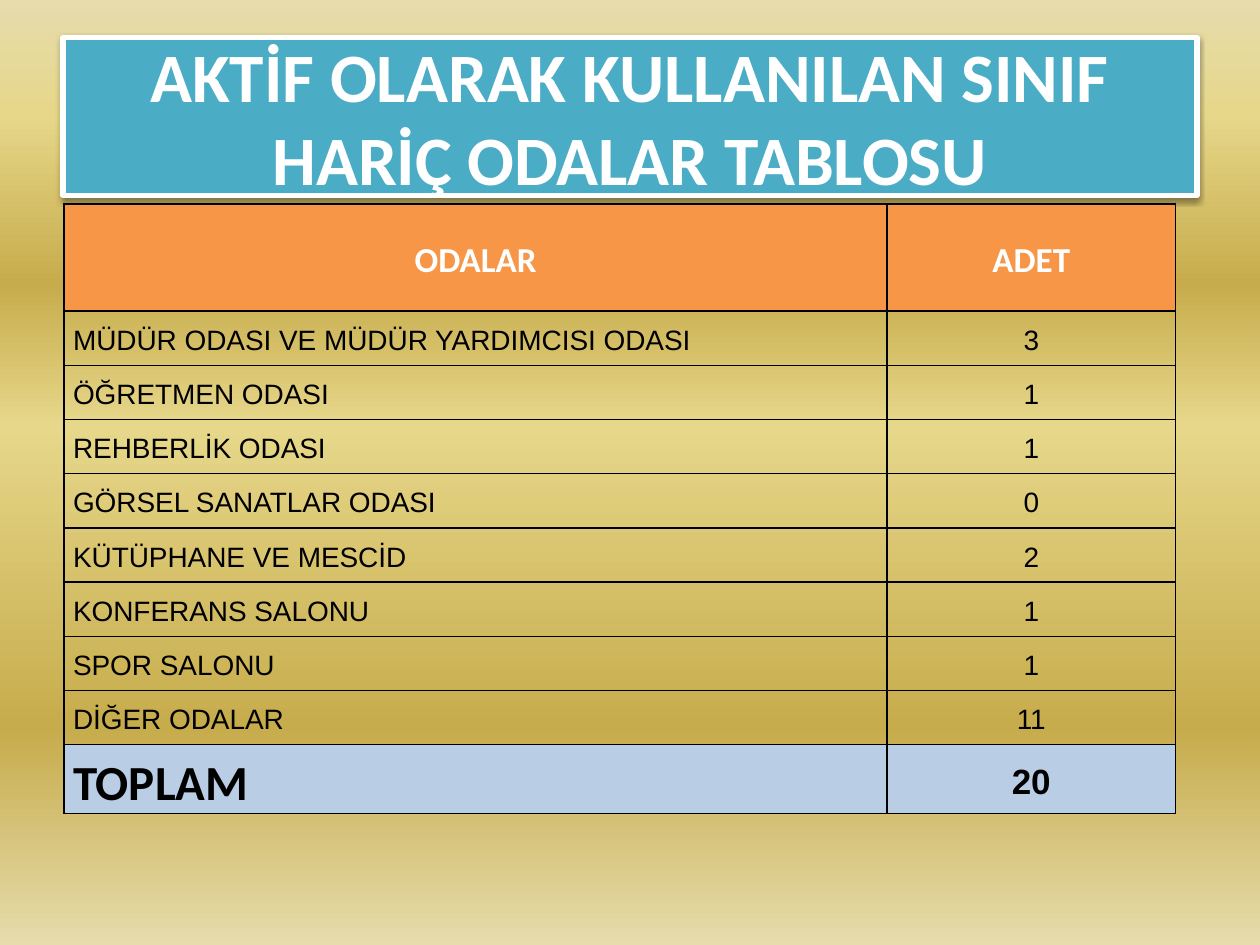
from lxml import etree
from pptx import Presentation
from pptx import util as u
from pptx.dml.color import RGBColor
from pptx.enum import text
from pptx.oxml import ns

TITLE = "AKTİF OLARAK KULLANILAN SINIF HARİÇ ODALAR TABLOSU"
HEADER = ("ODALAR", "ADET")
ROOMS = [
    ("MÜDÜR ODASI VE MÜDÜR YARDIMCISI ODASI", "3"),
    ("ÖĞRETMEN ODASI", "1"),
    ("REHBERLİK ODASI", "1"),
    ("GÖRSEL SANATLAR ODASI", "0"),
    ("KÜTÜPHANE VE MESCİD", "2"),
    ("KONFERANS SALONU", "1"),
    ("SPOR SALONU", "1"),
    ("DİĞER ODALAR", "11"),
]
TOTAL = ("TOPLAM", "20")
STOPS = [(0, "E6DCAC"), (12, "E6D78A"), (30, "C7AC4C"),
         (45, "E6D78A"), (77, "C7AC4C"), (100, "E6DCAC")]


def color(value):
    """Return the colour for a hex string."""
    return RGBColor.from_string(value)


def add_node(parent, tag, **attributes):
    """Append an XML element with the given attributes."""
    node = etree.SubElement(parent, ns.qn(tag))
    for name, value in attributes.items():
        node.set(name, str(value))
    return node


def paint_background(page):
    """Fill the page with a banded vertical gradient."""
    fill = page.background.fill
    fill.gradient()
    fill.gradient_angle = 270
    stops = next(page._element.iter(ns.qn("a:gsLst")))
    for stop in list(stops):
        stops.remove(stop)
    for position, value in STOPS:
        stop = add_node(stops, "a:gs", pos=position * 1000)
        add_node(stop, "a:srgbClr", val=value)


def format_text(frame, align, font, size, value, bold):
    """Set the alignment and font of every paragraph in a frame."""
    for para in frame.paragraphs:
        para.alignment = align
        for span in para.runs:
            span.font.name = font
            span.font.size = u.Pt(size)
            span.font.bold = bold
            span.font.color.rgb = color(value)


def add_shadow(box):
    """Give a box a soft shadow below it."""
    box.shadow.inherit = False
    effects = box._element.spPr.find(ns.qn("a:effectLst"))
    shadow = add_node(effects, "a:outerShdw", blurRad=u.Pt(3.1), dist=u.Pt(1.6),
                      dir=5400000, rotWithShape=0)
    shade = add_node(shadow, "a:srgbClr", val="000000")
    add_node(shade, "a:alpha", val=38000)


def format_title(box):
    """Place the title and draw it as a framed banner."""
    box.left, box.top = u.Inches(0.5), u.Inches(0.3)
    box.width, box.height = u.Inches(9), u.Inches(1.25)
    box.fill.solid()
    box.fill.fore_color.rgb = color("4BACC6")
    box.line.color.rgb = color("FFFFFF")
    box.line.width = u.Pt(3)
    add_shadow(box)
    frame = box.text_frame
    frame.text = TITLE
    frame.word_wrap = True
    frame.auto_size = text.MSO_AUTO_SIZE.NONE
    frame.vertical_anchor = text.MSO_ANCHOR.MIDDLE
    format_text(frame, text.PP_ALIGN.CENTER, "Calibri", 39.6, "FFFFFF", True)


def add_borders(cell):
    """Draw a thin black line on each side of a cell."""
    properties = cell._tc.get_or_add_tcPr()
    for index, side in enumerate(("a:lnL", "a:lnR", "a:lnT", "a:lnB")):
        line = add_node(properties, side, w=u.Pt(1))
        add_node(add_node(line, "a:solidFill"), "a:srgbClr", val="000000")
        properties.insert(index, line)


def fill_cell(cell, words, align, font, size, value="000000", bold=False, fill=None):
    """Write and format one table cell."""
    cell.text = words
    cell.vertical_anchor = text.MSO_ANCHOR.MIDDLE
    cell.margin_left = cell.margin_right = u.Inches(0.07)
    cell.margin_top = cell.margin_bottom = 0
    format_text(cell.text_frame, align, font, size, value, bold)
    cell.text_frame.paragraphs[0].line_spacing = 1.15
    if fill:
        cell.fill.solid()
        cell.fill.fore_color.rgb = color(fill)
    else:
        cell.fill.background()
    add_borders(cell)


def add_room_table(page):
    """Add the table of rooms with its header and total."""
    heights = [0.85] + [0.43] * len(ROOMS) + [0.53]
    table = page.shapes.add_table(len(heights), 2, u.Inches(0.51), u.Inches(1.62),
                                  u.Inches(8.82), u.Inches(sum(heights))).table
    table.first_row = table.horz_banding = False
    for column, width in zip(table.columns, (6.53, 2.29)):
        column.width = u.Inches(width)
    for row, height in zip(table.rows, heights):
        row.height = u.Inches(height)

    left, center = text.PP_ALIGN.LEFT, text.PP_ALIGN.CENTER
    for column, words in enumerate(HEADER):
        fill_cell(table.cell(0, column), words, center, "Calibri", 20,
                  "FFFFFF", True, "F79646")
    for row, (room, count) in enumerate(ROOMS, start=1):
        fill_cell(table.cell(row, 0), room, left, "Arial", 16)
        fill_cell(table.cell(row, 1), count, center, "Arial", 16)
    last = len(heights) - 1
    fill_cell(table.cell(last, 0), TOTAL[0], left, "Calibri", 28,
              bold=True, fill="B9CDE5")
    fill_cell(table.cell(last, 1), TOTAL[1], center, "Arial", 20,
              bold=True, fill="B9CDE5")


def main():
    """Build the deck and save it."""
    deck = Presentation()
    deck.slide_width, deck.slide_height = u.Inches(10), u.Inches(7.5)
    page = deck.slides.add_slide(deck.slide_layouts[5])
    paint_background(page)
    format_title(page.shapes.title)
    add_room_table(page)
    deck.save("out.pptx")


if __name__ == "__main__":
    main()
